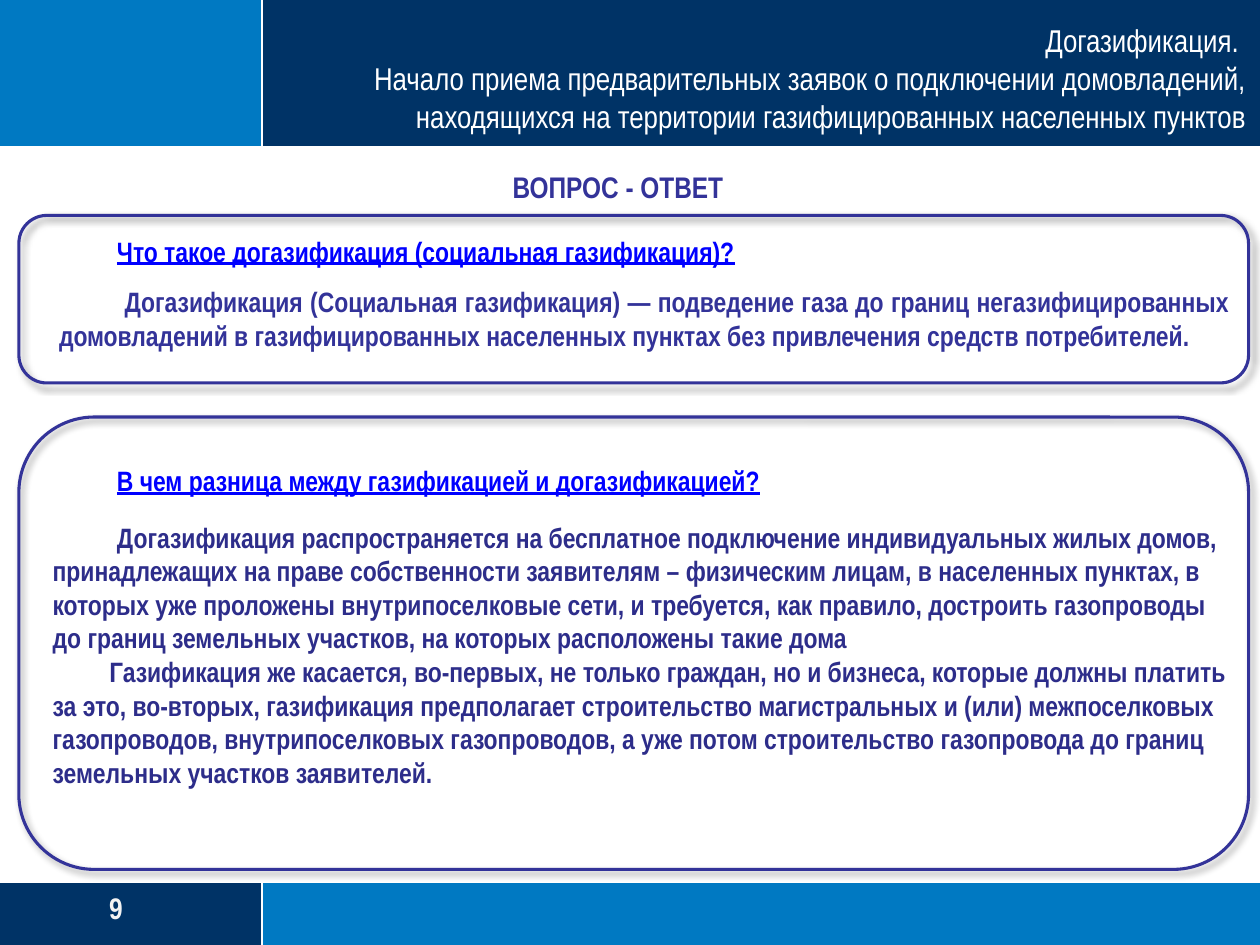
from lxml import etree
from pptx import Presentation
from pptx.dml.color import RGBColor
from pptx.enum.shapes import MSO_CONNECTOR, MSO_SHAPE
from pptx.enum.text import MSO_ANCHOR, MSO_AUTO_SIZE, PP_ALIGN
from pptx.oxml import parse_xml
from pptx.oxml.ns import nsdecls, qn
from pptx.util import Inches, Pt

RECTANGLE, ROUNDED = MSO_SHAPE.RECTANGLE, MSO_SHAPE.ROUNDED_RECTANGLE
STRAIGHT = MSO_CONNECTOR.STRAIGHT
LEFT, CENTER, RIGHT, JUSTIFY = (
    PP_ALIGN.LEFT, PP_ALIGN.CENTER, PP_ALIGN.RIGHT, PP_ALIGN.JUSTIFY)
BOTTOM = MSO_ANCHOR.BOTTOM
NO_FIT, GROW = MSO_AUTO_SIZE.NONE, MSO_AUTO_SIZE.SHAPE_TO_FIT_TEXT

WHITE = RGBColor(0xFF, 0xFF, 0xFF)
PALE = RGBColor(0xF2, 0xF2, 0xF2)
BLUE = RGBColor(0x00, 0x79, 0xC2)
NAVY = RGBColor(0x00, 0x33, 0x66)
INDIGO = RGBColor(0x33, 0x33, 0x99)
DARK_INDIGO = RGBColor(0x2D, 0x2D, 0x8A)
LINK_BLUE = RGBColor(0x00, 0x00, 0xFF)

FONT = "Arial Narrow"
WIDTH, HEIGHT = 10, 7.5
COLUMN = 2.08          # divider between the narrow and the wide band
HEADER, FOOTER = 1.17, 7.0
PANEL_LEFT, PANEL_WIDTH = 0.15, 9.76
QUESTION_LEFT, QUESTION_WIDTH = 0.83, 5.65

TITLE = [
    "Догазификация. ",
    "Начало приема предварительных заявок о подключении домовладений, "
    "находящихся на территории газифицированных населенных пунктов",
]
QUESTION_WHAT = "Что такое догазификация (социальная газификация)?"
ANSWER_WHAT = (
    "Догазификация (Социальная газификация) — подведение газа до границ "
    "негазифицированных домовладений в газифицированных населенных пунктах "
    "без привлечения средств потребителей.")
QUESTION_DIFFERENCE = "В чем разница между газификацией и догазификацией?"
ANSWER_DIFFERENCE = [
    "Догазификация распространяется на бесплатное подключение индивидуальных "
    "жилых домов, принадлежащих на праве собственности заявителям – физическим "
    "лицам, в населенных пунктах, в которых уже проложены внутрипоселковые "
    "сети, и требуется, как правило, достроить газопроводы до границ земельных "
    "участков, на которых расположены такие дома",
    "Газификация же касается, во-первых, не только граждан, но и бизнеса, "
    "которые должны платить за это, во-вторых, газификация предполагает "
    "строительство магистральных и (или) межпоселковых газопроводов, "
    "внутрипоселковых газопроводов, а уже потом строительство газопровода до "
    "границ земельных участков заявителей.",
]


def inches(*lengths):
    return [Inches(length) for length in lengths]


def add_band(page, left, top, width, height, color):
    band = page.shapes.add_shape(RECTANGLE, *inches(left, top, width, height))
    band.shadow.inherit = False
    band.fill.solid()
    band.fill.fore_color.rgb = color
    band.line.fill.background()


def add_divider(page, x1, y1, x2, y2):
    divider = page.shapes.add_connector(STRAIGHT, *inches(x1, y1, x2, y2))
    divider.line.color.rgb = WHITE
    divider.line.width = Pt(1.25)
    etree.SubElement(divider.element.spPr, qn("a:effectLst"))


def add_panel(page, top, height):
    """Add an unfilled rounded frame with a soft shadow."""
    panel = page.shapes.add_shape(
        ROUNDED, *inches(PANEL_LEFT, top, PANEL_WIDTH, height))
    panel.fill.background()
    panel.line.color.rgb = INDIGO
    panel.line.width = Pt(1.75)
    panel.element.spPr.append(parse_xml(
        f'<a:effectLst {nsdecls("a")}>'
        f'<a:outerShdw blurRad="{Pt(4)}" dist="{Pt(3)}" dir="2700000" '
        'algn="tl" rotWithShape="0"><a:srgbClr val="000000">'
        '<a:alpha val="40000"/></a:srgbClr></a:outerShdw></a:effectLst>'))


def write(frame, texts, size, color, align, bold=True, underline=None,
          indents=(0, 0)):
    """Fill a text frame; indents are first-line indents, one a paragraph."""
    frame.text = "\n".join(texts)
    frame.word_wrap = True
    for para, indent in zip(frame.paragraphs, indents):
        if indent:
            para._p.get_or_add_pPr().set("indent", str(Inches(indent)))
        para.alignment = align
        font = para.font
        font.name, font.size, font.bold = FONT, Pt(size), bold
        font.underline = underline
        font.color.rgb = color


def add_text(page, left, top, width, height, texts, size, color, align=LEFT,
             **style):
    box = page.shapes.add_textbox(*inches(left, top, width, height))
    write(box.text_frame, texts, size, color, align, **style)
    box.text_frame.auto_size = GROW


def add_question(page, top, text):
    add_text(page, QUESTION_LEFT, top, QUESTION_WIDTH, 0.37, [text], 16,
             LINK_BLUE, underline=True)


def place_title(page):
    title = page.shapes.title
    title.left, title.top, title.width, title.height = inches(
        2.26, 0, 7.63, 1.07)
    frame = title.text_frame
    write(frame, TITLE, 18, WHITE, RIGHT, bold=False)
    frame.auto_size = NO_FIT
    frame.vertical_anchor = BOTTOM
    frame.margin_left = frame.margin_right = 0
    frame.margin_top = frame.margin_bottom = 0
    # Bring the title in front of the header bands.
    title.element.getparent().append(title.element)


def add_frame(page):
    wide = WIDTH - COLUMN
    add_band(page, 0, FOOTER, WIDTH, HEIGHT - FOOTER, BLUE)
    add_band(page, 0, FOOTER, COLUMN, HEIGHT - FOOTER, NAVY)
    add_band(page, 0, 0, COLUMN, HEADER, BLUE)
    add_band(page, COLUMN, 0, wide, HEADER, NAVY)
    for y in (HEADER, FOOTER):
        add_divider(page, 0, y, WIDTH, y)
    for top, bottom in ((0, HEADER), (FOOTER, HEIGHT)):
        add_divider(page, COLUMN, top, COLUMN, bottom)


def main():
    deck = Presentation()
    deck.slide_width, deck.slide_height = inches(WIDTH, HEIGHT)
    page = deck.slides.add_slide(deck.slide_layouts.get_by_name("Title Only"))

    add_frame(page)
    place_title(page)
    add_text(page, 3.45, 1.29, 2.91, 0.39, ["ВОПРОС - ОТВЕТ"], 17, INDIGO,
             CENTER)

    add_panel(page, 1.71, 1.33)
    add_question(page, 1.81, QUESTION_WHAT)
    add_text(page, 0.37, 2.21, 9.49, 0.64, [ANSWER_WHAT], 16, INDIGO, JUSTIFY,
             indents=[0.52])

    add_panel(page, 3.31, 3.59)
    add_question(page, 3.63, QUESTION_DIFFERENCE)
    add_text(page, 0.32, 4.08, 9.63, 2.26, ANSWER_DIFFERENCE, 16, DARK_INDIGO,
             indents=[0.51, 0.45])

    add_text(page, 0.41, 7.01, 1.02, 0.39, ["9"], 17, PALE, CENTER)
    deck.save("out.pptx")


if __name__ == "__main__":
    main()
